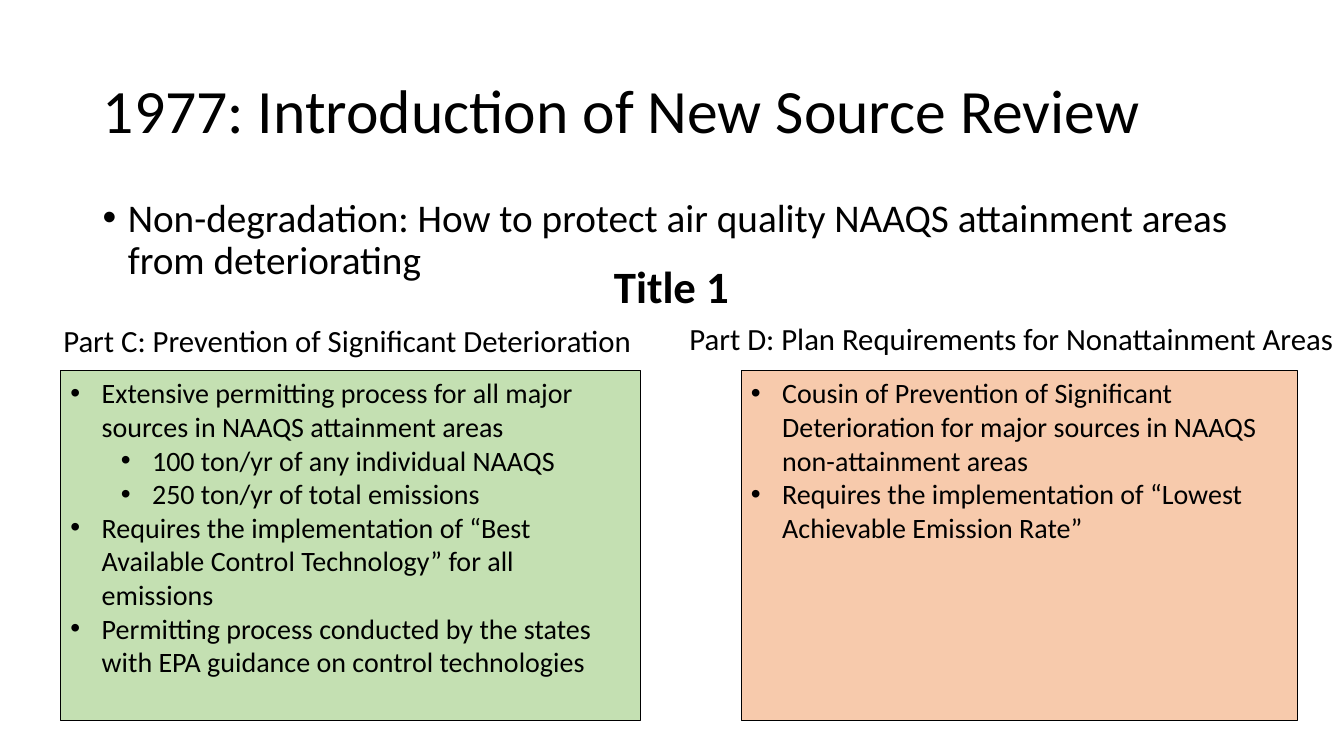
from lxml import etree
from pptx import Presentation
from pptx import util as u
from pptx.dml.color import RGBColor
from pptx.enum import shapes, text
from pptx.oxml.ns import qn

PX = 9144  # EMU per px, 100 px to the inch
FONT = "Calibri"
HUES = {"ink": "000000", "green": "C4E0B2", "peach": "F7CAAC"}

TITLE = ("1977: Introduction of New Source Review", (92, 40, 1150, 145))
LEAD = ("Non-degradation: How to protect air quality NAAQS attainment areas "
        "from deteriorating", (92, 192, 1150, 476))

# text, box, size, bold
LABELS = [
    ("Title 1", (599, 252, 136, 64), 32, True),
    ("Part C: Prevention of Significant Deterioration",
     (53, 314, 590, 47), 22, False),
    ("Part D: Plan Requirements for Nonattainment Areas",
     (674, 312, 667, 84), 22, False),
]

# fill, left, width, (level, text) items
PANELS = [
    ("green", 60, 575, [
        (0, "Extensive permitting process for all major sources in NAAQS "
            "attainment areas"),
        (1, "100 ton/yr of any individual NAAQS"),
        (1, "250 ton/yr of total emissions"),
        (0, "Requires the implementation of “Best Available Control "
            "Technology” for all emissions"),
        (0, "Permitting process conducted by the states with EPA guidance "
            "on control technologies"),
    ]),
    ("peach", 735, 552, [
        (0, "Cousin of Prevention of Significant Deterioration for major "
            "sources in NAAQS non-attainment areas"),
        (0, "Requires the implementation of “Lowest Achievable Emission "
            "Rate”"),
    ]),
]
PANEL_TOP, PANEL_HIGH = 368, 347
HANG, STEP = 31, 50


def hue(name):
    return RGBColor.from_string(HUES[name])


def emu(box):
    return [n * PX for n in box]


def bullet(para, left, hang):
    """Give the paragraph a round bullet, hung to the left of its text."""
    props = para._p.get_or_add_pPr()
    props.set("marL", str(left * PX))
    props.set("indent", str(-hang * PX))
    etree.SubElement(props, qn("a:buFont"), typeface="Arial")
    etree.SubElement(props, qn("a:buChar"), char="•")


def style(para, size, bold=False):
    para.alignment = text.PP_ALIGN.LEFT
    font = para.font
    font.name, font.size, font.bold = FONT, u.Pt(size), bold
    font.color.rgb = hue("ink")


def setup(frame, anchor=text.MSO_ANCHOR.TOP):
    frame.word_wrap = True
    frame.auto_size = text.MSO_AUTO_SIZE.NONE
    frame.vertical_anchor = anchor
    return frame


def add_text(slide, words, box):
    frame = setup(slide.shapes.add_textbox(*emu(box)).text_frame)
    para = frame.paragraphs[0]
    para.text = words
    return para


def add_panel(slide, fill, left, width, items):
    box = (left, PANEL_TOP, width, PANEL_HIGH)
    panel = slide.shapes.add_shape(shapes.MSO_SHAPE.RECTANGLE, *emu(box))
    panel.shadow.inherit = False
    panel.fill.solid()
    panel.fill.fore_color.rgb = hue(fill)
    panel.line.color.rgb = hue("ink")
    panel.line.width = u.Pt(0.75)
    frame = setup(panel.text_frame)
    for i, (level, words) in enumerate(items):
        para = frame.add_paragraph() if i else frame.paragraphs[0]
        para.text, para.level = words, level
        bullet(para, HANG + STEP * level, HANG)
        style(para, 20)


def main():
    deck = Presentation()
    deck.slide_width, deck.slide_height = emu((1333, 750))
    slide = deck.slides.add_slide(deck.slide_layouts[5])

    title = slide.shapes.title
    words, box = TITLE
    title.left, title.top, title.width, title.height = emu(box)
    head = setup(title.text_frame, text.MSO_ANCHOR.MIDDLE).paragraphs[0]
    head.text = words
    head.line_spacing = 0.9
    style(head, 44)

    lead = add_text(slide, *LEAD)
    bullet(lead, 25, 25)
    lead.line_spacing = 0.9
    style(lead, 28)

    for panel in PANELS:
        add_panel(slide, *panel)
    for words, box, size, bold in LABELS:
        style(add_text(slide, words, box), size, bold)

    deck.save("out.pptx")


if __name__ == "__main__":
    main()
